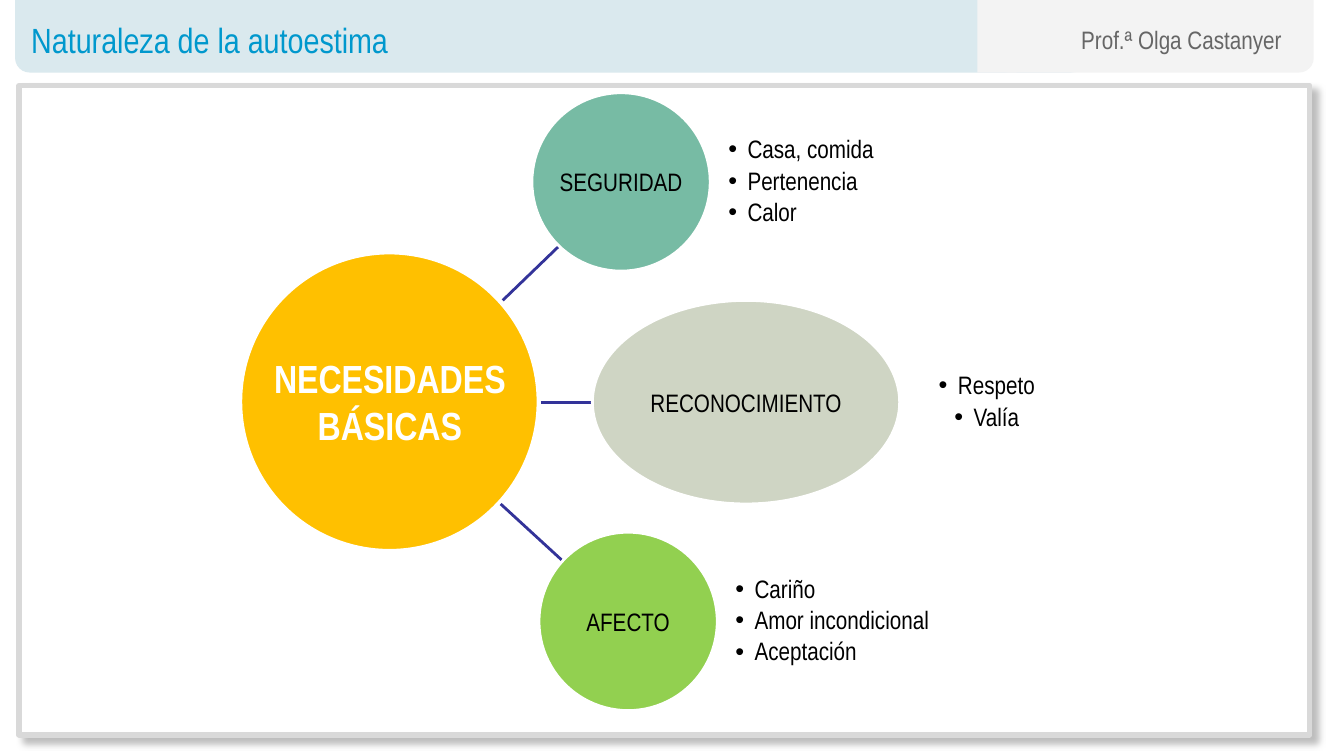
from lxml import etree
from pptx import Presentation
from pptx.dml.color import RGBColor
from pptx.enum.shapes import MSO_CONNECTOR, MSO_SHAPE
from pptx.enum.text import MSO_ANCHOR, PP_ALIGN
from pptx.oxml.ns import qn
from pptx.util import Inches, Pt

COLS, ROWS = 133.4, 75
W, H = Inches(13.34), Inches(7.5)
FONT = "Arial Narrow"
COLORS = {
    "white": "FFFFFF", "black": "000000", "frame": "D9D9D9",
    "band": "DAE9EE", "tab": "F3F3F3", "title": "0098CD",
    "author": "666666", "link": "333399", "hub": "FFC000",
    "safety": "77BBA4", "esteem": "CFD5C4", "love": "92D050",
}
NEEDS = [
    ("SEGURIDAD", "safety", (52.8, 9.2, 17.7, 17.7), (49.9, 29.8, 55.5, 24.4),
     ["Casa, comida", "Pertenencia", "Calor"], (72.3, 9.2, 26.6, 17.7), PP_ALIGN.LEFT),
    ("RECONOCIMIENTO", "esteem", (58.8, 29.8, 30.5, 20.2), (53.7, 39.9, 58.7, 39.9),
     ["Respeto", "Valía"], (75.1, 29.8, 45.7, 20.2), PP_ALIGN.CENTER),
    ("AFECTO", "love", (53.5, 52.8, 17.7, 17.7), (49.7, 50, 55.8, 55.6),
     ["Cariño", "Amor incondicional", "Aceptación"], (73, 52.8, 26.6, 17.7), PP_ALIGN.LEFT),
]


def rgb(name):
    """Return the named colour."""
    return RGBColor.from_string(COLORS[name])


def cells(a, b, c, d):
    """Turn two column and row pairs into slide lengths."""
    return [round(v * unit) for v, unit in zip((a, b, c, d), (W / COLS, H / ROWS) * 2)]


def write(sp, lines, size, color, align=PP_ALIGN.LEFT, bold=False, inset=0, wrap=True):
    """Put vertically centred lines of text in a shape."""
    tf = sp.text_frame
    tf.text = "\n".join(lines)
    tf.word_wrap = wrap
    tf.vertical_anchor = MSO_ANCHOR.MIDDLE
    tf.margin_left = tf.margin_right = Inches(inset)
    tf.margin_top = tf.margin_bottom = 0
    for p in tf.paragraphs:
        p.alignment = align
        for r in p.runs:
            r.font.name, r.font.size, r.font.bold = FONT, Pt(size), bold
            r.font.color.rgb = rgb(color)
    return tf


def add_box(s, kind, box, fill, line=None, width=2):
    """Add a filled preset shape with an optional outline."""
    sp = s.shapes.add_shape(kind, *cells(*box))
    sp.shadow.inherit = False
    sp.fill.solid()
    sp.fill.fore_color.rgb = rgb(fill)
    if line:
        sp.line.color.rgb = rgb(line)
        sp.line.width = Pt(width)
    else:
        sp.line.fill.background()
    return sp


def add_frame(s):
    """Add the content frame with its soft shadow."""
    sp = add_box(s, MSO_SHAPE.RECTANGLE, (1.9, 8.5, 128.1, 64.4), "white", "frame", 4)
    effects = sp.element.spPr.find(qn("a:effectLst"))
    shadow = etree.SubElement(effects, qn("a:outerShdw"), blurRad=str(Pt(5)),
                              dist=str(Pt(6)), dir="2700000", algn="tl", rotWithShape="0")
    color = etree.SubElement(shadow, qn("a:srgbClr"), val=COLORS["black"])
    etree.SubElement(color, qn("a:alpha"), val="25000")


def add_text(s, box, lines, size, color, **style):
    """Add a text box."""
    return write(s.shapes.add_textbox(*cells(*box)), lines, size, color, **style)


def add_list(s, box, items, align):
    """Add a bulleted list."""
    tf = add_text(s, box, items, 18, "black", align=align)
    for p in tf.paragraphs:
        p.line_spacing = 0.9
        p.space_after = Pt(3)
        pPr = p._p.get_or_add_pPr()
        pPr.set("marL", str(Inches(0.19)))
        pPr.set("indent", str(-Inches(0.19)))
        etree.SubElement(pPr, qn("a:buFont"), typeface="Arial")
        etree.SubElement(pPr, qn("a:buChar"), char="•")


def add_link(s, ends):
    """Add a line from the hub to a need."""
    cxn = s.shapes.add_connector(MSO_CONNECTOR.STRAIGHT, *cells(*ends))
    cxn.line.color.rgb = rgb("link")
    cxn.line.width = Pt(2)
    etree.SubElement(cxn.element.spPr, qn("a:effectLst"))


def add_header(s):
    """Add the header bands, the title and the author."""
    add_box(s, MSO_SHAPE.ROUNDED_RECTANGLE, (1.5, -1.5, 106.3, 8.7), "band")
    add_box(s, MSO_SHAPE.ROUNDED_RECTANGLE, (98.6, -1.5, 31.8, 8.7), "tab")
    add_box(s, MSO_SHAPE.RECTANGLE, (97, 0, 3.9, 7.2), "tab")
    title = s.shapes.title
    title.left, title.top, title.width, title.height = cells(2.1, 1.3, 90, 5.2)
    write(title, ["Naturaleza de la autoestima"], 25, "title", inset=0.1)
    s.shapes.element.append(title.element)
    add_text(s, (99.8, 1.9, 28.4, 4), ["Prof.ª Olga Castanyer"], 18, "author",
             align=PP_ALIGN.RIGHT, inset=0.1)


def add_needs(s):
    """Add the hub and the needs around it."""
    add_box(s, MSO_SHAPE.OVAL, (23.9, 25.1, 29.5, 29.5), "hub", "white")
    add_text(s, (25.7, 34.6, 26, 10.4), ["NECESIDADES BÁSICAS"], 28, "white",
             align=PP_ALIGN.CENTER, bold=True, inset=0.1)
    for name, fill, oval, ends, items, box, align in NEEDS:
        add_link(s, ends)
        sp = add_box(s, MSO_SHAPE.OVAL, oval, fill, "white")
        write(sp, [name], 18, "black", align=PP_ALIGN.CENTER, wrap=False)
        add_list(s, box, items, align)


def main():
    """Build the slide."""
    prs = Presentation()
    prs.slide_width, prs.slide_height = W, H
    s = prs.slides.add_slide(prs.slide_layouts[5])
    add_frame(s)
    add_header(s)
    add_needs(s)
    prs.save("out.pptx")


if __name__ == "__main__":
    main()
